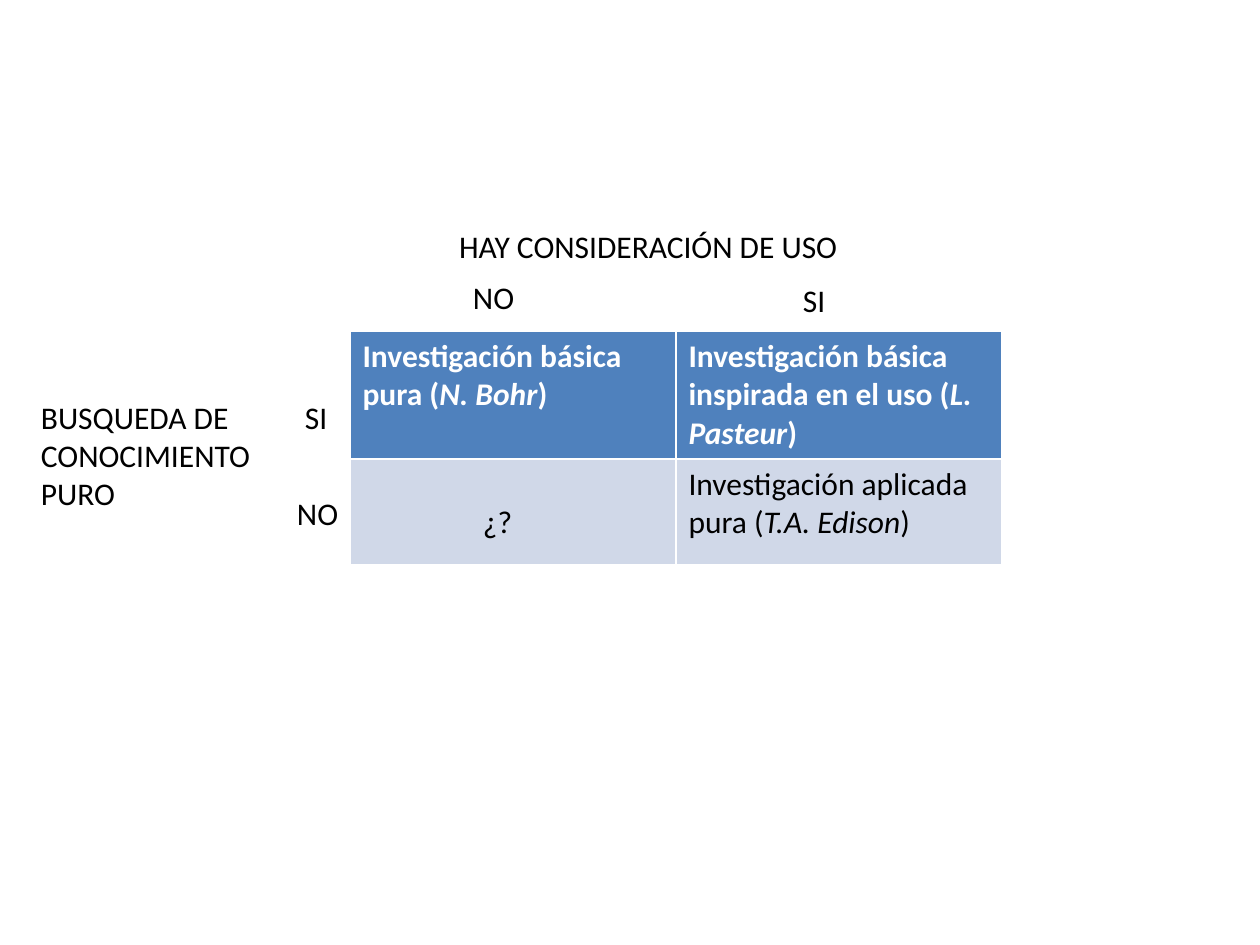
from dataclasses import dataclass

from pptx import Presentation
from pptx.dml.color import RGBColor
from pptx.enum.text import MSO_AUTO_SIZE
from pptx.util import Pt

PX = 914400 // 126
FIT_SHAPE = MSO_AUTO_SIZE.SHAPE_TO_FIT_TEXT


@dataclass(frozen=True)
class Theme:
    font: str = "Calibri"
    size: int = 18
    ink: str = "000000"
    header_ink: str = "FFFFFF"
    header_fill: str = "4F81BD"
    body_fill: str = "D0D8E8"


theme = Theme()


def write_text(frame, text, italic="", ending="", color=theme.ink, bold=False):
    paragraph = frame.paragraphs[0]
    for part, slanted in ((text, False), (italic, True), (ending, False)):
        if part:
            run = paragraph.add_run()
            run.text = part
            run.font.name = theme.font
            run.font.size = Pt(theme.size)
            run.font.bold = bold
            run.font.italic = slanted
            run.font.color.rgb = RGBColor.from_string(color)


presentation = Presentation()
presentation.slide_width = 1260 * PX
presentation.slide_height = 945 * PX
slide = presentation.slides.add_slide(presentation.slide_layouts[6])

quadrants = [
    [("Investigación básica pura (", "N. Bohr", ")"),
     ("Investigación básica inspirada en el uso (", "L. Pasteur", ")")],
    [("¿?", "", ""),
     ("Investigación aplicada pura (", "T.A. Edison", ")")],
]
row_styles = [
    (127, theme.header_fill, theme.header_ink, True),
    (106, theme.body_fill, theme.ink, False),
]
table = slide.shapes.add_table(2, 2, 350 * PX, 331 * PX, 652 * PX, 233 * PX).table
for column in table.columns:
    column.width = 326 * PX
for row, contents, (height, fill, color, bold) in zip(table.rows, quadrants, row_styles):
    row.height = height * PX
    for cell, (text, italic, ending) in zip(row.cells, contents):
        cell.fill.solid()
        cell.fill.fore_color.rgb = RGBColor.from_string(fill)
        write_text(cell.text_frame, text, italic, ending, color=color, bold=bold)

unknown_cell = table.cell(1, 0)
unknown_cell.margin_left = 133 * PX
unknown_cell.margin_top = 45 * PX

labels = [
    ("HAY CONSIDERACIÓN DE USO", 340, 221, 653, 50, 119, True),
    ("NO", 460, 272, 67, 50, 13, False),
    ("SI", 790, 275, 48, 50, 13, False),
    ("BUSQUEDA DE CONOCIMIENTO PURO", 28, 392, 238, 127, 13, True),
    ("SI", 292, 392, 48, 50, 13, False),
    ("NO", 284, 488, 67, 50, 13, False),
]
for text, left, top, width, height, indent, wrap in labels:
    label = slide.shapes.add_textbox(left * PX, top * PX, width * PX, height * PX)
    frame = label.text_frame
    frame.word_wrap = wrap
    frame.auto_size = FIT_SHAPE
    frame.margin_left = indent * PX
    write_text(frame, text)

presentation.save("out.pptx")
